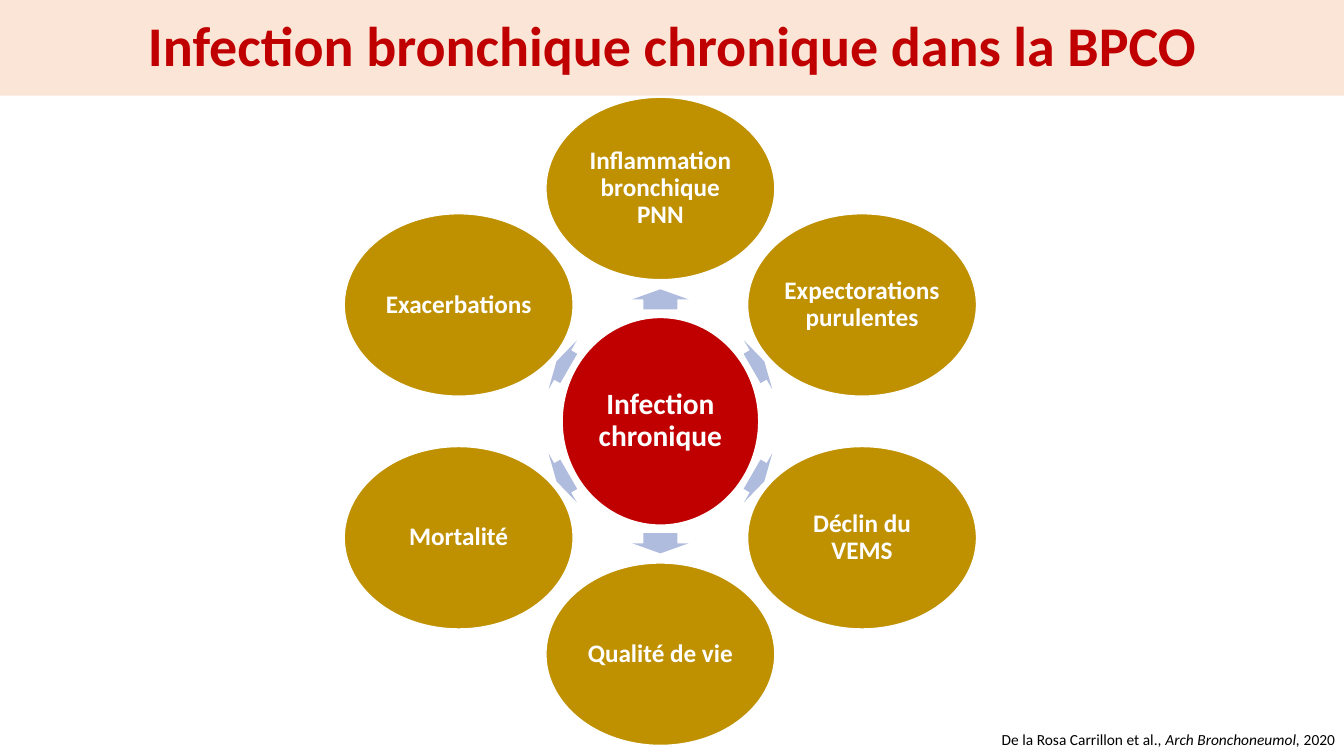
from math import cos, radians, sin

from pptx import Presentation
from pptx.dml.color import RGBColor
from pptx.enum.shapes import MSO_SHAPE as Shape
from pptx.enum.text import MSO_ANCHOR as Anchor, PP_ALIGN as Align
from pptx.util import Inches, Pt

COLORS = {
    "banner": "FBE5D6",
    "red": "C00000",
    "gold": "BF9000",
    "arrow": "B0BCDE",
    "white": "FFFFFF",
    "black": "000000",
}
CENTER_X, CENTER_Y = 6.55, 4.18
RING_RADIUS = 2.31
CONSEQUENCES = [
    "Inflammation bronchique PNN",
    "Expectorations purulentes",
    "Déclin du VEMS",
    "Qualité de vie",
    "Mortalité",
    "Exacerbations",
]


def color(name):
    return RGBColor.from_string(COLORS[name])


def write(frame, runs, size, ink="white", bold=True, align=Align.CENTER,
          anchor=Anchor.MIDDLE, spacing=0.9, inset=None):
    frame.word_wrap = True
    frame.vertical_anchor = anchor
    if inset is not None:
        frame.margin_left = frame.margin_right = Inches(inset)
        frame.margin_top = frame.margin_bottom = Inches(inset)
    paragraph = frame.paragraphs[0]
    paragraph.alignment = align
    paragraph.line_spacing = spacing
    for text, italic in runs:
        run = paragraph.add_run()
        run.text = text
        run.font.name = "Calibri"
        run.font.size = Pt(size)
        run.font.bold = bold
        run.font.italic = italic
        run.font.color.rgb = color(ink)


def add_filled(slide, preset, x, y, width, height, fill, outline=None):
    figure = slide.shapes.add_shape(
        preset, Inches(x - width / 2), Inches(y - height / 2),
        Inches(width), Inches(height))
    figure.shadow.inherit = False
    figure.fill.solid()
    figure.fill.fore_color.rgb = color(fill)
    if outline:
        figure.line.color.rgb = color(outline)
        figure.line.width = Pt(1)
    else:
        figure.line.fill.background()
    return figure


def add_bubble(slide, text, x, y, width, height, fill, size):
    bubble = add_filled(slide, Shape.OVAL, x, y, width, height, fill, "white")
    write(bubble.text_frame, [(text, False)], size, inset=0.02)


def add_ray_arrow(slide, angle):
    vertical = angle % 180 == 90
    radius, length = (1.21, 0.2) if vertical else (1.12, 0.14)
    x, y = ring_point(angle, radius)
    arrow = add_filled(slide, Shape.RIGHT_ARROW, x, y, length, 0.56, "arrow")
    arrow.adjustments[0] = 0.6
    arrow.adjustments[1] = 0.5
    arrow.rotation = angle


def ring_point(angle, radius):
    return (CENTER_X + radius * cos(radians(angle)),
            CENTER_Y + radius * sin(radians(angle)))


def add_title(slide, text):
    banner = add_filled(slide, Shape.RECTANGLE, 13.33 / 2, 0.95 / 2,
                        13.33, 0.95, "banner")
    write(banner.text_frame, [(text, False)], 40, ink="red")


def add_citation(slide, runs):
    citation = slide.shapes.add_textbox(
        Inches(0.37), Inches(7.19), Inches(12.97), Inches(0.29))
    write(citation.text_frame, runs, 11, ink="black", bold=False,
          align=Align.RIGHT, anchor=Anchor.TOP, spacing=1.0)


def main():
    deck = Presentation()
    deck.slide_width = Inches(13.33)
    deck.slide_height = Inches(7.5)
    slide = deck.slides.add_slide(deck.slide_layouts[6])

    add_title(slide, "Infection bronchique chronique dans la BPCO")
    add_bubble(slide, "Infection chronique", CENTER_X, CENTER_Y,
               1.95, 2.06, "red", 21)
    for index, consequence in enumerate(CONSEQUENCES):
        angle = (270 + index * 360 / len(CONSEQUENCES)) % 360
        add_ray_arrow(slide, angle)
        x, y = ring_point(angle, RING_RADIUS)
        add_bubble(slide, consequence, x, y, 2.27, 1.81, "gold", 18)
    add_citation(slide, [
        ("De la Rosa Carrillon et al., ", False),
        ("Arch Bronchoneumol, ", True),
        ("2020", False),
    ])
    deck.save("out.pptx")


if __name__ == "__main__":
    main()
